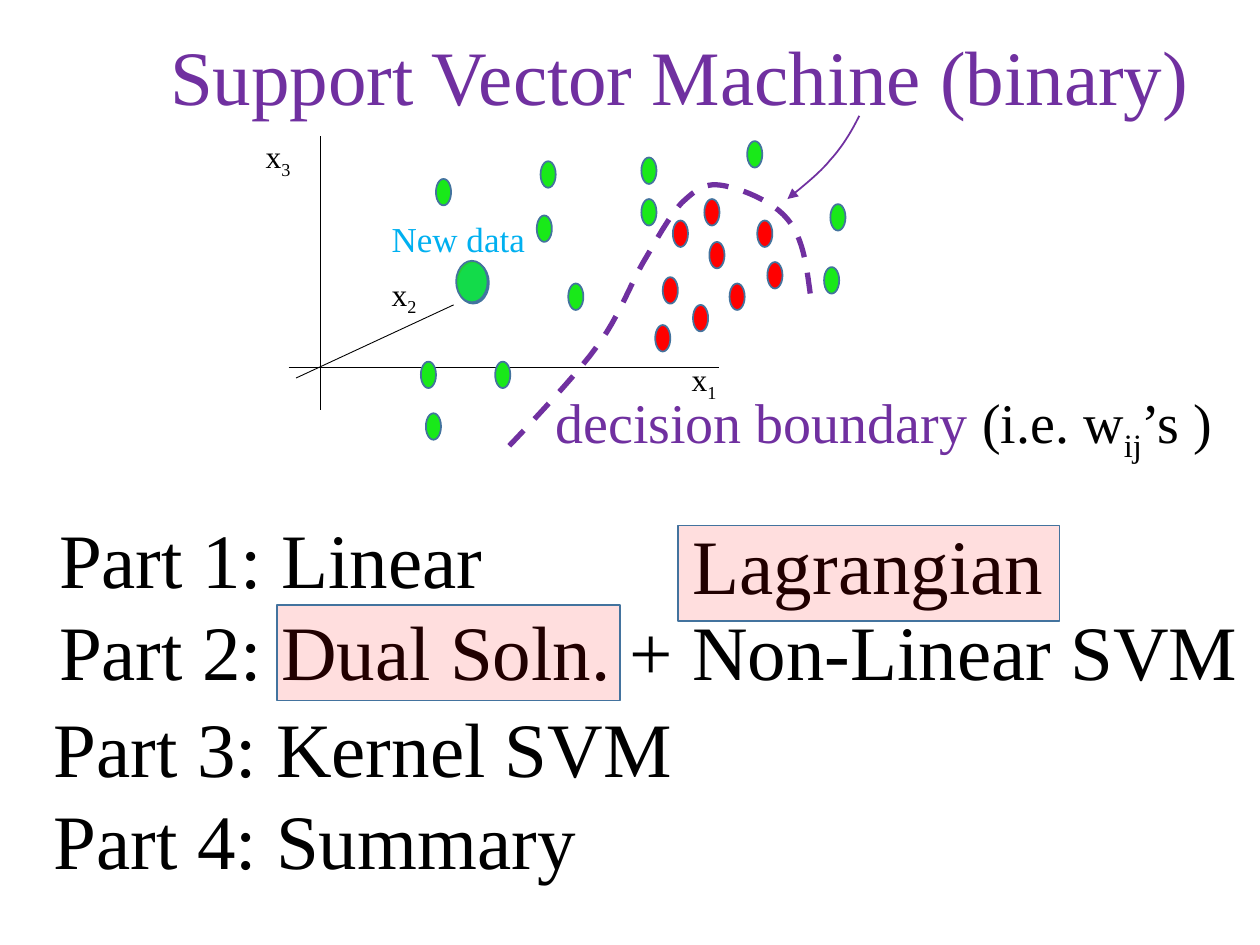
from dataclasses import dataclass
from typing import NamedTuple

import pptx
import pptx.dml.color
import pptx.enum.dml
import pptx.enum.shapes
import pptx.enum.text
import pptx.oxml
import pptx.oxml.ns
import pptx.util

# The page is a grid of 100 columns by 75 rows; all lengths are in grid cells.
COLUMNS, ROWS = 100, 75
CELL = pptx.util.Inches(0.1)
CURVE_STEPS = 12


@dataclass(frozen=True)
class Theme:
    font: str = "Times New Roman"
    black: str = "000000"
    white: str = "FFFFFF"
    purple: str = "7030A0"
    blue: str = "00B0F0"
    red: str = "FF0000"
    green: str = "19E919"
    outline: str = "43739E"
    heading: int = 44
    caption: int = 32
    note: int = 20
    axis: int = 18


THEME = Theme()


class Area(NamedTuple):
    left: float
    top: float
    width: float
    height: float


class Point(NamedTuple):
    x: float
    y: float


class Span(NamedTuple):
    text: str
    color: str = THEME.black
    subscript: bool = False


class Label(NamedTuple):
    area: Area
    size: int
    lines: list[list[Span]]


AXES = [
    (Point(25.4, 10.8), Point(25.4, 32.5)),
    (Point(22.9, 29.2), Point(57.1, 29.2)),
    (Point(23.5, 30), Point(36, 24.2)),
]
AXIS_LABELS = [("1", 53.9, 28.1), ("3", 20.1, 10.4), ("2", 30.1, 21.3)]
DOT_WIDTH, DOT_HEIGHT = 1.2, 2.1
RED_DOTS = [(55.9, 15.8), (60.1, 17.5), (56.3, 19.2), (60.9, 20.8), (57.9, 22.5),
            (55, 24.2), (52, 25.8), (53.4, 17.5), (52.6, 22)]
GREEN_DOTS = [(33.8, 32.8), (33.4, 28.7), (39.3, 28.7), (45.1, 22.5), (50.9, 12.5),
              (59.3, 11.2), (34.6, 14.2), (42.9, 12.8), (42.6, 17.1), (50.9, 15.8),
              (65.9, 16.2), (65.4, 21.2)]
# Each curve is a start point, then two control points and an end per piece.
BOUNDARY = [Point(*pair) for pair in (
    (64.3, 23.3), (64, 21), (63.7, 18.8), (62.5, 17.4), (61.3, 15.9), (58.6, 14.9),
    (57.2, 14.7), (55.8, 14.5), (55.1, 15.2), (54.1, 16.1), (53.2, 17.1), (52.4, 18.5),
    (51.3, 20.4), (50.1, 22.3), (49.2, 25.1), (47.3, 27.6), (45.5, 30.1), (40.4, 35.4),
    (40.4, 35.4))]
POINTER = [Point(*pair) for pair in (
    (68.2, 9.2), (67.6, 10.4), (66.9, 11.6), (65.9, 12.7), (65, 13.8), (63.7, 14.8),
    (62.5, 15.8))]

TITLE = Label(Area(12.5, 1.8, 83, 8.4), THEME.heading,
              [[Span("Support Vector Machine (binary)", THEME.purple)]])
BOUNDARY_LABEL = Label(Area(43.1, 30.3, 54.8, 6.4), THEME.caption, [[
    Span("decision boundary ", THEME.purple), Span("(i.e. w"),
    Span("ij", subscript=True), Span("’s )")]])
NEW_DATA_LABEL = Label(Area(30.1, 16.8, 12.7, 4.4), THEME.note,
                       [[Span("New data", THEME.blue)]])
OUTLINE_LABELS = [
    Label(Area(3.7, 40.1, 96.5, 15.8), THEME.heading,
          [[Span("Part 1: Linear")], [Span("Part 2: Dual Soln. + Non-Linear SVM")]]),
    Label(Area(3.3, 55.1, 51.5, 15.8), THEME.heading,
          [[Span("Part 3: Kernel SVM")], [Span("Part 4: Summary")]]),
    Label(Area(54, 40.6, 30.1, 8.4), THEME.heading, [[Span("Lagrangian")]]),
]
HIGHLIGHTS = [Area(22, 48, 27.2, 7.6), Area(53.8, 41.7, 30.3, 7.6)]


def cells(count: float) -> int:
    return round(count * CELL)


def rgb(color: str) -> pptx.dml.color.RGBColor:
    return pptx.dml.color.RGBColor.from_string(color)


def add_xml(parent, tag: str, **attributes: str) -> None:
    child = pptx.oxml.parse_xml(f"<a:{tag} {pptx.oxml.ns.nsdecls('a')}/>")
    for name, value in attributes.items():
        child.set(name, value)
    parent.append(child)


def set_line(shape, color: str, width: float) -> None:
    shape.line.color.rgb = rgb(color)
    shape.line.width = pptx.util.Pt(width)


def write_label(box, label: Label) -> None:
    box.left, box.top, box.width, box.height = map(cells, label.area)
    frame = box.text_frame
    frame.word_wrap = False
    frame.auto_size = pptx.enum.text.MSO_AUTO_SIZE.SHAPE_TO_FIT_TEXT
    frame.vertical_anchor = pptx.enum.text.MSO_ANCHOR.TOP
    for index, spans in enumerate(label.lines):
        para = frame.add_paragraph() if index else frame.paragraphs[0]
        para.alignment = pptx.enum.text.PP_ALIGN.LEFT
        for span in spans:
            run = para.add_run()
            run.text = span.text
            run.font.name = THEME.font
            run.font.size = pptx.util.Pt(label.size)
            run.font.color.rgb = rgb(span.color)
            if span.subscript:
                run._r.get_or_add_rPr().set("baseline", "-25000")


def add_label(page, label: Label) -> None:
    write_label(page.shapes.add_textbox(0, 0, 0, 0), label)


def add_filled(page, kind, area: Area, color: str, opacity: int = 100) -> None:
    shape = page.shapes.add_shape(kind, *map(cells, area))
    shape.shadow.inherit = False
    shape.fill.solid()
    shape.fill.fore_color.rgb = rgb(color)
    set_line(shape, THEME.outline, 1)
    if opacity < 100:
        fill = shape._element.spPr.find(pptx.oxml.ns.qn("a:solidFill"))
        add_xml(fill[0], "alpha", val=str(opacity * 1000))


def add_axis(page, start: Point, end: Point) -> None:
    axis = page.shapes.add_connector(pptx.enum.shapes.MSO_CONNECTOR.STRAIGHT,
                                     *map(cells, (*start, *end)))
    set_line(axis, THEME.black, 0.5)
    add_xml(axis._element.spPr, "effectLst")


def curve_points(knots: list[Point]) -> list[tuple[float, float]]:
    """Sample a chain of cubic Bézier pieces."""
    points = [tuple(knots[0])]
    for first in range(0, len(knots) - 1, 3):
        piece = knots[first:first + 4]
        for step in range(1, CURVE_STEPS + 1):
            t = step / CURVE_STEPS
            weights = ((1 - t) ** 3, 3 * t * (1 - t) ** 2, 3 * t * t * (1 - t), t ** 3)
            points.append(tuple(sum(w * v for w, v in zip(weights, values))
                                for values in zip(*piece)))
    return points


def add_curve(page, knots: list[Point], width: float):
    start, *others = [tuple(map(cells, point)) for point in curve_points(knots)]
    builder = page.shapes.build_freeform(*start)
    builder.add_line_segments(others, close=False)
    curve = builder.convert_to_shape()
    curve.shadow.inherit = False
    curve.fill.background()
    set_line(curve, THEME.purple, width)
    return curve


def draw_plot(page) -> None:
    oval = pptx.enum.shapes.MSO_SHAPE.OVAL
    for start, end in AXES:
        add_axis(page, start, end)
    for number, left, top in AXIS_LABELS:
        add_label(page, Label(Area(left, top, 4.1, 4), THEME.axis,
                              [[Span("x"), Span(number, subscript=True)]]))
    for color, dots in ((THEME.red, RED_DOTS), (THEME.green, GREEN_DOTS)):
        for left, top in dots:
            add_filled(page, oval, Area(left, top, DOT_WIDTH, DOT_HEIGHT), color)
    boundary = add_curve(page, BOUNDARY, 3)
    boundary.line.dash_style = pptx.enum.dml.MSO_LINE.DASH
    add_label(page, BOUNDARY_LABEL)
    add_filled(page, oval, Area(36.3, 20.8, 2.5, 3.3), THEME.blue)
    add_label(page, NEW_DATA_LABEL)
    add_filled(page, oval, Area(36.2, 20.7, 2.5, 3.3), THEME.green, opacity=77)
    pointer = add_curve(page, POINTER, 1)
    add_xml(pointer.line._get_or_add_ln(), "tailEnd", type="triangle")


def main() -> None:
    deck = pptx.Presentation()
    deck.slide_width, deck.slide_height = cells(COLUMNS), cells(ROWS)
    page = deck.slides.add_slide(deck.slide_layouts[5])
    title = page.shapes.title
    write_label(title, TITLE)
    title.fill.solid()
    title.fill.fore_color.rgb = rgb(THEME.white)
    draw_plot(page)
    for label in OUTLINE_LABELS:
        add_label(page, label)
    for area in HIGHLIGHTS:
        add_filled(page, pptx.enum.shapes.MSO_SHAPE.RECTANGLE, area, THEME.red, opacity=13)
    deck.save("out.pptx")


if __name__ == "__main__":
    main()
